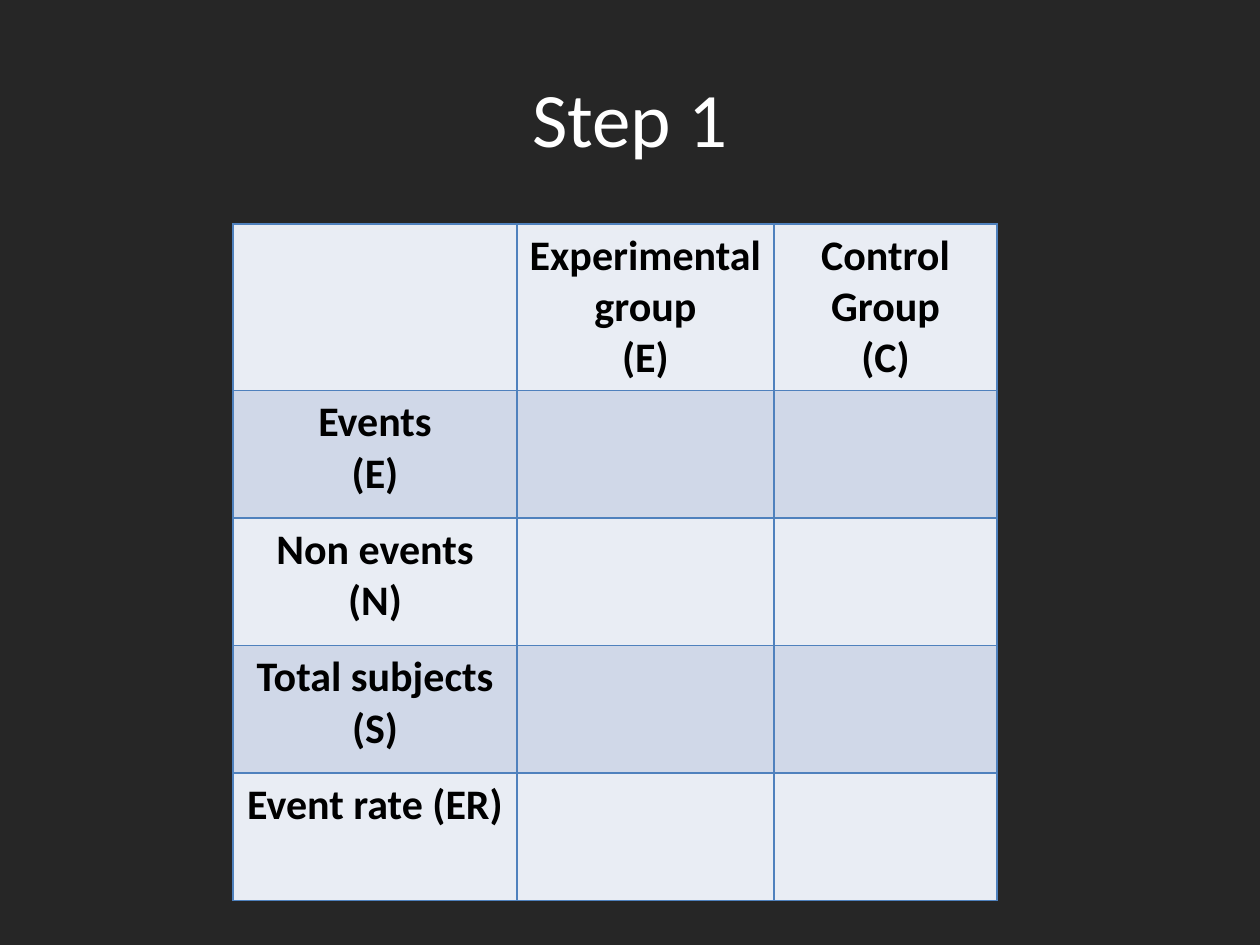
from lxml import etree
from pptx import Presentation
from pptx.dml.color import RGBColor
from pptx.enum import text
from pptx.oxml.ns import qn
from pptx.util import Cm, Pt

FONT = "Calibri"
BACKGROUND, WHITE, BLACK = "262626", "FFFFFF", "000000"
BORDER = "4F81BD"
BANDS = ["E9EDF4", "D0D8E8"]

COLUMN_WIDTHS = [5.72, 5.18, 4.5]
HEADER_HEIGHT, ROW_HEIGHT = 3.34, 2.57
GROUPS = ["Experimental group\n(E)", "Control Group\n(C)"]
MEASURES = ["Events\n(E)", "Non events\n(N)", "Total subjects\n(S)", "Event rate (ER)"]


def paint(fill, colour):
    fill.solid()
    fill.fore_color.rgb = RGBColor.from_string(colour)


def format_text(frame, size, colour, bold=False):
    for paragraph in frame.paragraphs:
        paragraph.alignment = text.PP_ALIGN.CENTER
        font = paragraph.font
        font.name, font.size, font.bold = FONT, Pt(size), bold
        font.color.rgb = RGBColor.from_string(colour)


def add_borders(cell):
    """Outline all four sides; call before filling, as lines precede the fill."""
    properties = cell._tc.get_or_add_tcPr()
    for side in ("lnL", "lnR", "lnT", "lnB"):
        line = etree.SubElement(properties, qn(f"a:{side}"), w=str(Pt(1)))
        fill = etree.SubElement(line, qn("a:solidFill"))
        etree.SubElement(fill, qn("a:srgbClr"), val=BORDER)


def set_title(slide, wording):
    title = slide.shapes.title
    title.left, title.top = Cm(1.27), Cm(0.76)
    title.width, title.height = Cm(22.86), Cm(3.18)
    title.text_frame.text = wording
    title.text_frame.vertical_anchor = text.MSO_ANCHOR.MIDDLE
    format_text(title.text_frame, 44, WHITE)


def add_outcome_table(slide):
    rows = [["", *GROUPS]] + [[measure, "", ""] for measure in MEASURES]
    heights = [HEADER_HEIGHT] + [ROW_HEIGHT] * len(MEASURES)
    table = slide.shapes.add_table(
        len(rows), len(COLUMN_WIDTHS), Cm(4.7), Cm(4.52),
        Cm(sum(COLUMN_WIDTHS)), Cm(sum(heights))).table
    for column, width in zip(table.columns, COLUMN_WIDTHS):
        column.width = Cm(width)
    for r, (labels, height) in enumerate(zip(rows, heights)):
        table.rows[r].height = Cm(height)
        for c, label in enumerate(labels):
            cell = table.cell(r, c)
            add_borders(cell)
            paint(cell.fill, BANDS[r % 2])
            if label:
                cell.text = label
                format_text(cell.text_frame, 24, BLACK, bold=True)


def main():
    deck = Presentation()
    deck.slide_width, deck.slide_height = Cm(25.4), Cm(19.05)
    slide = deck.slides.add_slide(deck.slide_layouts[5])
    paint(slide.background.fill, BACKGROUND)
    set_title(slide, "Step 1")
    add_outcome_table(slide)
    deck.save("out.pptx")


if __name__ == "__main__":
    main()
